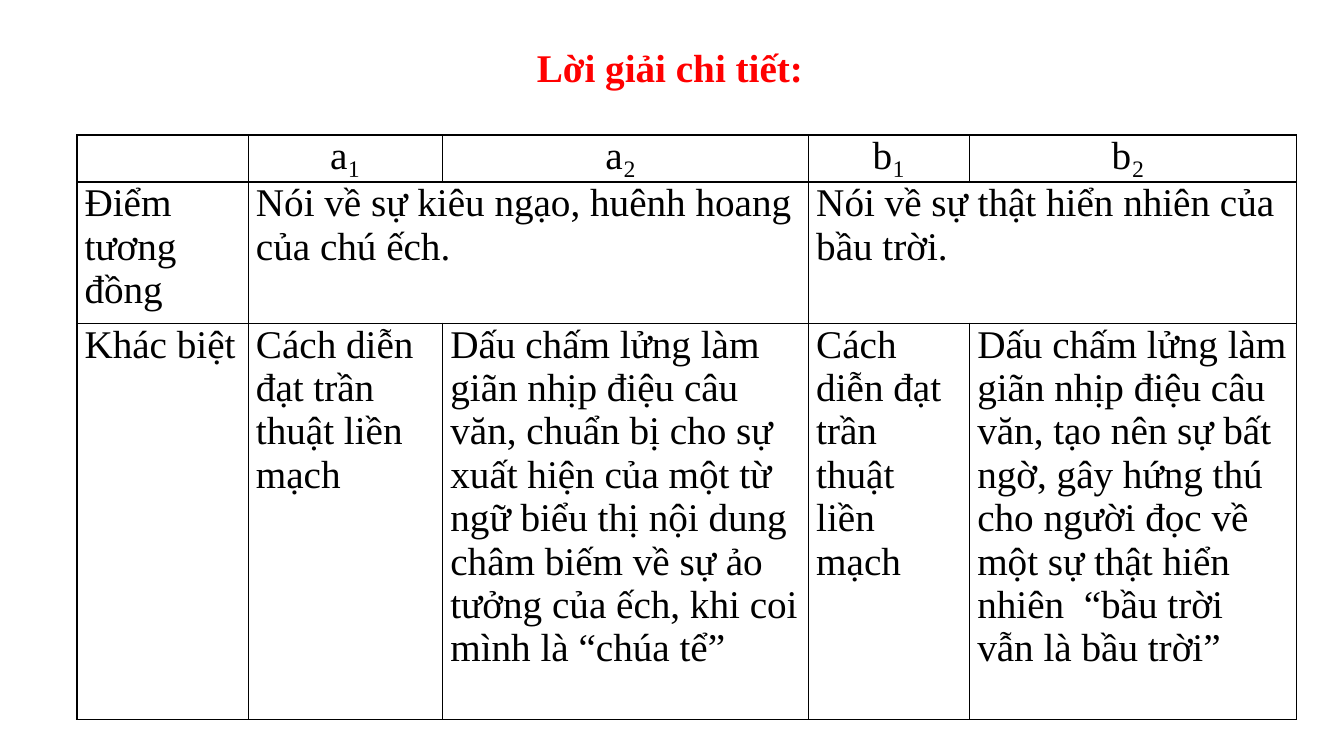
from dataclasses import dataclass
from pptx import Presentation
from pptx.dml.color import RGBColor
from pptx.enum.text import MSO_AUTO_SIZE, PP_ALIGN
from pptx.oxml import parse_xml
from pptx.oxml.ns import nsdecls
from pptx.util import Cm, Pt

TITLE = "Lời giải chi tiết:"
HEADINGS = ["", "a₁", "a₂ ", "b₁", "b₂ "]
# None continues the cell on its left
SIMILARITY = ["Điểm tương đồng",
              "Nói về sự kiêu ngạo, huênh hoang của chú ếch.", None,
              "Nói về sự thật hiển nhiên của bầu trời.", None]
DIFFERENCE = [
    "Khác biệt",
    "Cách diễn đạt trần thuật liền mạch",
    "Dấu chấm lửng làm giãn nhịp điệu câu văn, chuẩn bị cho sự xuất hiện của một từ ngữ "
    "biểu thị nội dung châm biếm về sự ảo tưởng của ếch, khi coi mình là “chúa tể”",
    "Cách diễn đạt trần thuật liền mạch",
    "Dấu chấm lửng làm giãn nhịp điệu câu văn, tạo nên sự bất ngờ, gây hứng thú cho người "
    "đọc về một sự thật hiển nhiên  “bầu trời vẫn là bầu trời”",
]
ROWS = [HEADINGS, SIMILARITY, DIFFERENCE]
COLUMN_WIDTHS = [4.32, 4.9, 9.22, 4.06, 8.23]
ROW_HEIGHTS = [1.17, 3.53, 9.98]
TABLE_LEFT, TABLE_TOP = 1.94, 3.4
CELL_MARGIN = 0.19


@dataclass(frozen=True)
class Theme:
    font: str = "Times New Roman"
    size: int = 28
    title: str = "FF0000"
    ink: str = "000000"
    border: int = 1


THEME = Theme()


def write(frame, text, color=THEME.ink, bold=False, align=PP_ALIGN.LEFT):
    para = frame.paragraphs[0]
    para.alignment = align
    span = para.add_run()
    span.text = text
    span.font.name = THEME.font
    span.font.size = Pt(THEME.size)
    span.font.bold = bold
    span.font.color.rgb = RGBColor.from_string(color)


def add_title(page):
    box = page.shapes.add_textbox(Cm(13.28), Cm(0.97), Cm(7.29), Cm(1.45))
    box.text_frame.word_wrap = False
    box.text_frame.auto_size = MSO_AUTO_SIZE.SHAPE_TO_FIT_TEXT
    write(box.text_frame, TITLE, color=THEME.title, bold=True)


def style_cell(cell):
    cell.margin_left = cell.margin_right = Cm(CELL_MARGIN)
    cell.margin_top = cell.margin_bottom = 0
    cell.fill.background()
    properties = cell._tc.get_or_add_tcPr()
    for position, side in enumerate(("lnL", "lnR", "lnT", "lnB")):
        properties.insert(position, parse_xml(
            f'<a:{side} {nsdecls("a")} w="{Pt(THEME.border)}"><a:solidFill>'
            f'<a:srgbClr val="{THEME.ink}"/></a:solidFill></a:{side}>'))


def add_comparison(page):
    table = page.shapes.add_table(
        len(ROWS), len(COLUMN_WIDTHS), Cm(TABLE_LEFT), Cm(TABLE_TOP),
        Cm(sum(COLUMN_WIDTHS)), Cm(sum(ROW_HEIGHTS))).table
    table.first_row = table.horz_banding = False
    for column, width in zip(table.columns, COLUMN_WIDTHS):
        column.width = Cm(width)
    for row, height in zip(table.rows, ROW_HEIGHTS):
        row.height = Cm(height)
    for r, texts in enumerate(ROWS):
        align = PP_ALIGN.LEFT if r else PP_ALIGN.CENTER
        for c, text in enumerate(texts):
            cell = table.cell(r, c)
            style_cell(cell)
            if text is None:
                table.cell(r, c - 1).merge(cell)
            elif text:
                write(cell.text_frame, text, align=align)


def main():
    deck = Presentation()
    deck.slide_width, deck.slide_height = Cm(33.87), Cm(19.05)
    page = deck.slides.add_slide(deck.slide_layouts[6])
    add_title(page)
    add_comparison(page)
    deck.save("out.pptx")


if __name__ == "__main__":
    main()
